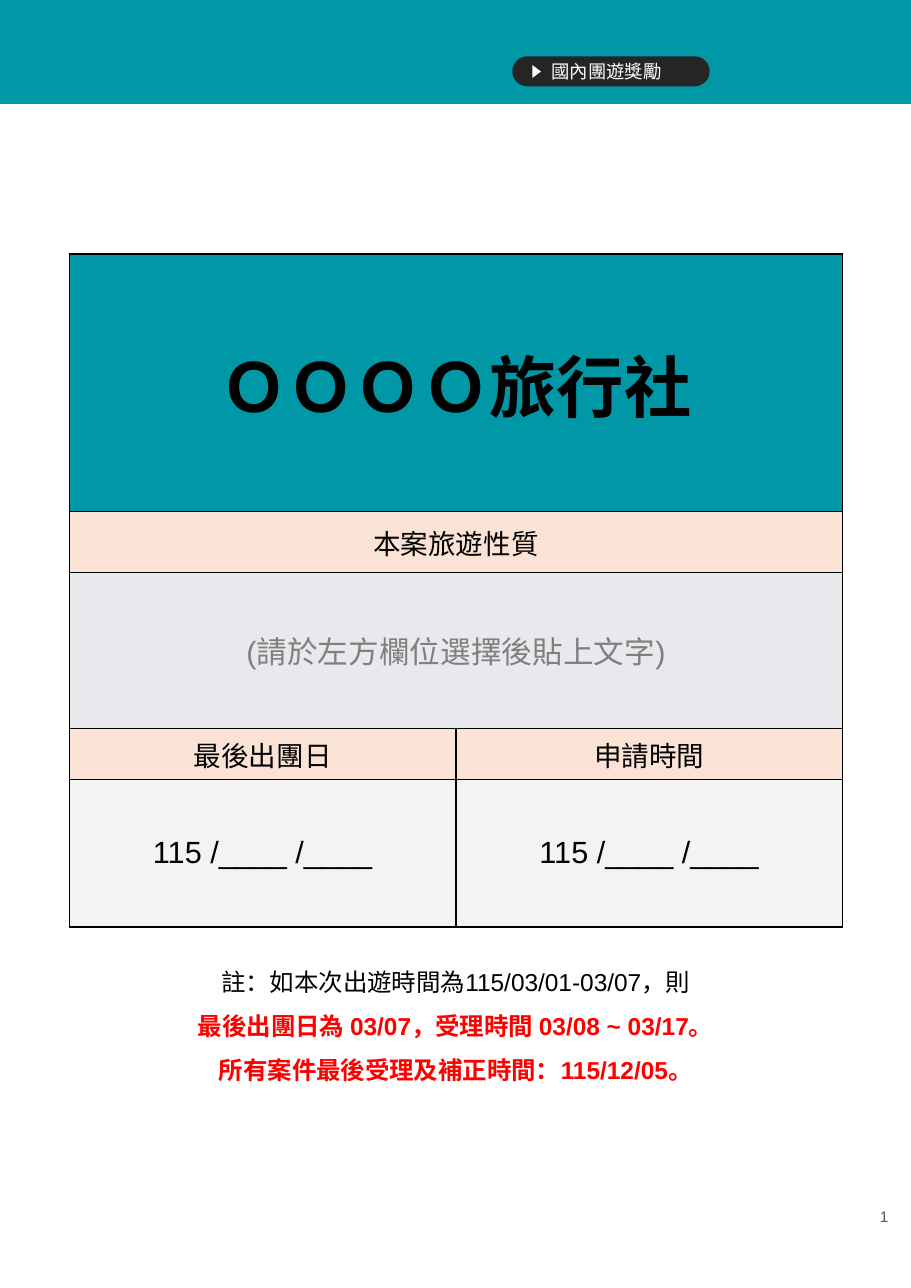
from lxml.etree import SubElement
from pptx import Presentation
from pptx.dml.color import RGBColor
from pptx.enum.shapes import MSO_SHAPE
from pptx.enum.text import MSO_ANCHOR, PP_ALIGN
from pptx.oxml.ns import qn
from pptx.util import Cm, Pt

TEAL = RGBColor(0x00, 0x97, 0xA7)
CHARCOAL = RGBColor(0x25, 0x25, 0x25)
WHITE = RGBColor(0xFF, 0xFF, 0xFF)
BLACK = RGBColor(0x00, 0x00, 0x00)
PEACH = RGBColor(0xFA, 0xE2, 0xD5)
MIST = RGBColor(0xE7, 0xE9, 0xEC)
PALE = RGBColor(0xF3, 0xF3, 0xF3)
GRAY = RGBColor(0x7F, 0x7F, 0x7F)
DARK_GRAY = RGBColor(0x59, 0x59, 0x59)
RED = RGBColor(0xFF, 0x00, 0x00)


class CoverSlide:
    """Draws the cover elements in one font on one slide."""

    font_name = "Arial"

    def __init__(self, presentation):
        self.slide = presentation.slides.add_slide(presentation.slide_layouts[6])

    def fill_paragraph(self, paragraph, text, size, color, bold=False, align=PP_ALIGN.CENTER):
        paragraph.text = text
        paragraph.alignment = align
        font = paragraph.font
        font.name = self.font_name
        font.size = Pt(size)
        font.bold = bold
        font.color.rgb = color

    def shape(self, kind, left, top, width, height, fill, line=None):
        shape = self.slide.shapes.add_shape(kind, Cm(left), Cm(top), Cm(width), Cm(height))
        shape.shadow.inherit = False
        shape.fill.solid()
        shape.fill.fore_color.rgb = fill
        if line is None:
            shape.line.fill.background()
        else:
            shape.line.color.rgb = line
            shape.line.width = Pt(0.75)
        return shape

    def badge(self, text, left, top, width, height):
        badge = self.shape(MSO_SHAPE.ROUNDED_RECTANGLE, left, top, width, height, CHARCOAL)
        badge.adjustments[0] = 0.5
        frame = badge.text_frame
        frame.margin_left = Cm(0.8)
        frame.margin_right = frame.margin_top = frame.margin_bottom = 0
        frame.vertical_anchor = MSO_ANCHOR.MIDDLE
        self.fill_paragraph(frame.paragraphs[0], text, 12, WHITE, align=PP_ALIGN.LEFT)

    def text(self, lines, left, top, width, height, size, align, anchor, spacing=1.0, inset=0.13):
        box = self.slide.shapes.add_textbox(Cm(left), Cm(top), Cm(width), Cm(height))
        frame = box.text_frame
        frame.word_wrap = True
        frame.vertical_anchor = anchor
        frame.margin_top = frame.margin_bottom = Cm(inset)
        for index, (line, color, bold) in enumerate(lines):
            paragraph = frame.add_paragraph() if index else frame.paragraphs[0]
            self.fill_paragraph(paragraph, line, size, color, bold, align)
            paragraph.line_spacing = spacing

    def border(self, cell):
        properties = cell._tc.get_or_add_tcPr()
        for side in ("lnL", "lnR", "lnT", "lnB"):
            line = SubElement(properties, qn(f"a:{side}"), w=str(Pt(1)))
            SubElement(SubElement(line, qn("a:solidFill")), qn("a:srgbClr"), val=str(BLACK))

    def table(self, rows, left, top, width):
        height = sum(row[0] for row in rows)
        frame = self.slide.shapes.add_table(len(rows), 2, Cm(left), Cm(top), Cm(width), Cm(height))
        table = frame.table
        table.first_row = table.horz_banding = False
        for index, (row_height, fill, size, color, bold, texts) in enumerate(rows):
            table.rows[index].height = Cm(row_height)
            for column in range(2):
                cell = table.cell(index, column)
                self.border(cell)
                cell.fill.solid()
                cell.fill.fore_color.rgb = fill
                cell.vertical_anchor = MSO_ANCHOR.MIDDLE
            if len(texts) == 1:
                table.cell(index, 0).merge(table.cell(index, 1))
            for column, text in enumerate(texts):
                paragraph = table.cell(index, column).text_frame.paragraphs[0]
                self.fill_paragraph(paragraph, text, size, color, bold)


def main():
    presentation = Presentation()
    presentation.slide_width = Cm(21)
    presentation.slide_height = Cm(29.7)
    cover = CoverSlide(presentation)

    cover.shape(MSO_SHAPE.RECTANGLE, -0.18, -0.13, 21.23, 2.51, TEAL, TEAL)
    cover.badge("國內團遊獎勵", 11.81, 1.3, 4.55, 0.69)
    arrow = cover.shape(MSO_SHAPE.ISOSCELES_TRIANGLE, 12.22, 1.55, 0.3, 0.2, WHITE)
    arrow.rotation = 90

    date_blank = "115 /____ /____"
    cover.table(
        [
            (5.94, TEAL, 44, BLACK, True, ["ＯＯＯＯ旅行社"]),
            (1.4, PEACH, 18, BLACK, False, ["本案旅遊性質"]),
            (3.6, MIST, 20, GRAY, False, ["(請於左方欄位選擇後貼上文字)"]),
            (1.15, PEACH, 18, BLACK, False, ["最後出團日", "申請時間"]),
            (3.4, PALE, 20, BLACK, False, [date_blank, date_blank]),
        ],
        1.6, 5.86, 17.82,
    )

    cover.text([("1", DARK_GRAY, False)], 19.46, 26.92, 1.27, 2.26, 10,
               PP_ALIGN.RIGHT, MSO_ANCHOR.MIDDLE)
    cover.text(
        [
            ("註：如本次出遊時間為115/03/01-03/07，則", BLACK, False),
            ("最後出團日為 03/07，受理時間 03/08 ~ 03/17。", RED, True),
            ("所有案件最後受理及補正時間：115/12/05。", RED, True),
        ],
        1.6, 21.72, 17.81, 3.25, 16, PP_ALIGN.CENTER, MSO_ANCHOR.TOP, 1.5, 0.25,
    )
    presentation.save("out.pptx")


if __name__ == "__main__":
    main()
